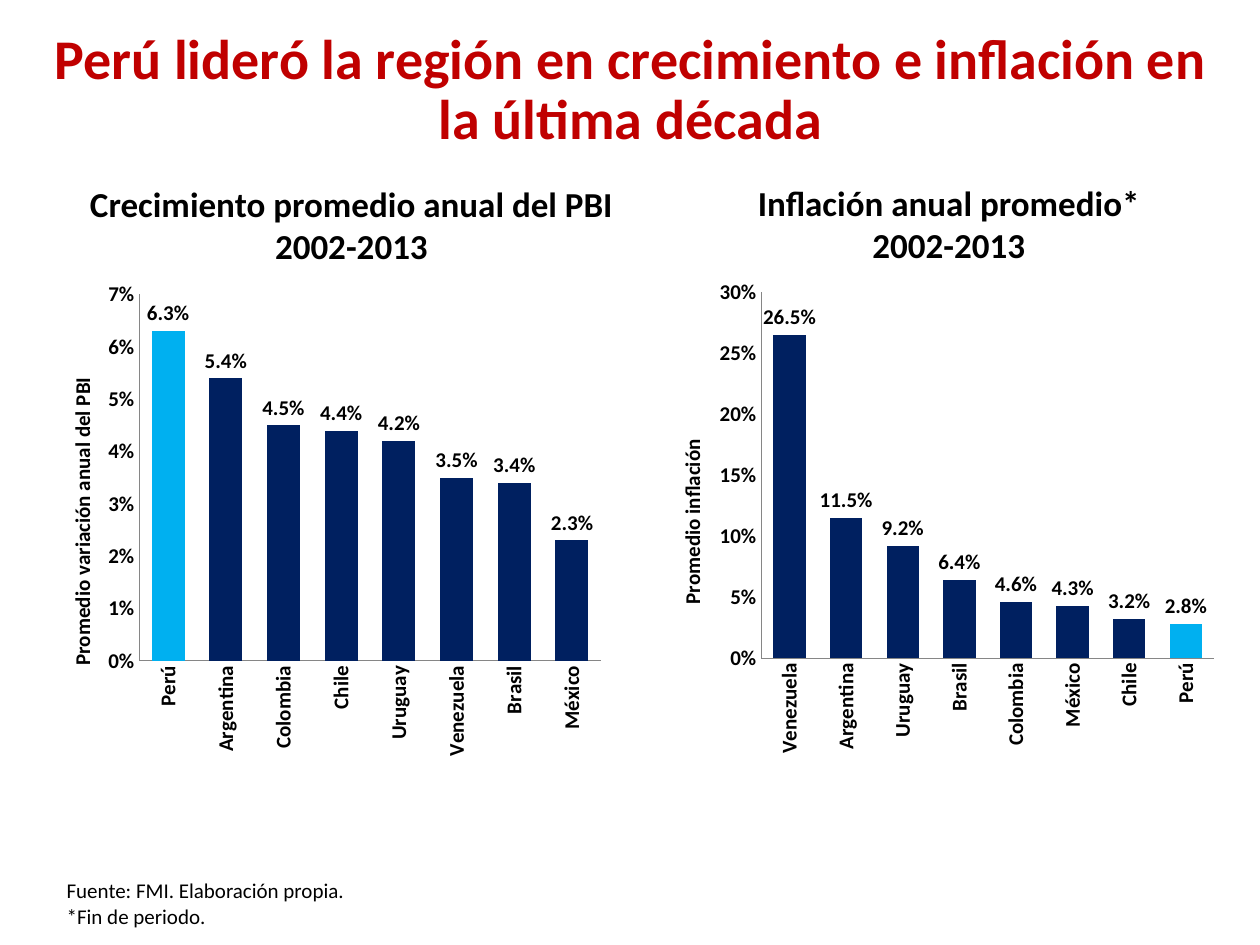
import dataclasses

import lxml.etree
import pptx
import pptx.chart.axis
import pptx.chart.chart
import pptx.chart.data
import pptx.dml.color
import pptx.enum.chart
import pptx.enum.shapes
import pptx.enum.text
import pptx.oxml.ns
import pptx.slide
import pptx.text.text
import pptx.util

Pt = pptx.util.Pt
Color = pptx.dml.color.RGBColor
Align = pptx.enum.text.PP_ALIGN


@dataclasses.dataclass(frozen=True)
class Theme:
    font: str = "Calibri"
    title_size: int = 32
    heading_size: int = 20
    small_size: int = 12
    title: Color = Color(0xC0, 0x00, 0x00)
    text: Color = Color(0x00, 0x00, 0x00)
    background: Color = Color(0xFF, 0xFF, 0xFF)
    bar: Color = Color(0x00, 0x20, 0x60)
    highlight: Color = Color(0x00, 0xB0, 0xF0)
    axis: Color = Color(0x86, 0x86, 0x86)


@dataclasses.dataclass(frozen=True)
class Box:
    left: float
    top: float
    width: float
    height: float

    def lengths(self) -> tuple:
        return Pt(self.left), Pt(self.top), Pt(self.width), Pt(self.height)


@dataclasses.dataclass(frozen=True)
class Panel:
    heading: str
    heading_box: Box
    chart_box: Box
    plot_area: dict[str, float]
    axis_title: str
    axis_title_place: dict[str, float]
    maximum: float
    step: float
    values: dict[str, float]


THEME = Theme()
HOME_COUNTRY = "Perú"
PANELS = (
    Panel(
        "Crecimiento promedio anual del PBI\n2002-2013",
        Box(42.5, 100.8, 316.8, 55.4), Box(20.2, 157, 329.8, 283),
        {"x": 0.18, "y": 0.04, "w": 0.8, "h": 0.74},
        "Promedio variación anual del PBI", {"x": 0.05, "y": 0.2}, 0.07, 0.01,
        {"Perú": 0.063, "Argentina": 0.054, "Colombia": 0.045, "Chile": 0.044,
         "Uruguay": 0.042, "Venezuela": 0.035, "Brasil": 0.034, "México": 0.023},
    ),
    Panel(
        "Inflación anual promedio*\n2002-2013",
        Box(383.8, 100.1, 316.8, 55.4), Box(368.6, 155.5, 331.9, 283),
        {"x": 0.2, "y": 0.04, "w": 0.78, "h": 0.74},
        "Promedio inflación", {"x": 0.05, "y": 0.33}, 0.3, 0.05,
        {"Venezuela": 0.265, "Argentina": 0.115, "Uruguay": 0.092, "Brasil": 0.064,
         "Colombia": 0.046, "México": 0.043, "Chile": 0.032, "Perú": 0.028},
    ),
)


def style_font(font: pptx.text.text.Font, size: int, color: Color, bold: bool) -> None:
    font.name = THEME.font
    font.size = Pt(size)
    font.bold = bold
    font.color.rgb = color


def write_text(frame: pptx.text.text.TextFrame, text: str, size: int, color: Color,
               bold: bool, alignment: Align) -> None:
    frame.text = text
    for paragraph in frame.paragraphs:
        paragraph.alignment = alignment
        for run in paragraph.runs:
            style_font(run.font, size, color, bold)


def add_label(slide: pptx.slide.Slide, box: Box, text: str, size: int, bold: bool,
              alignment: Align, wrap: bool) -> None:
    frame = slide.shapes.add_textbox(*box.lengths()).text_frame
    frame.word_wrap = wrap
    frame.auto_size = pptx.enum.text.MSO_AUTO_SIZE.SHAPE_TO_FIT_TEXT
    write_text(frame, text, size, THEME.text, bold, alignment)


def add_title(slide: pptx.slide.Slide) -> None:
    shape = slide.shapes.add_shape(
        pptx.enum.shapes.MSO_SHAPE.RECTANGLE, *Box(20.2, 15.1, 680.4, 74.2).lengths())
    shape.shadow.inherit = False
    shape.fill.solid()
    shape.fill.fore_color.rgb = THEME.background
    shape.line.fill.background()
    frame = shape.text_frame
    frame.word_wrap = True
    frame.vertical_anchor = pptx.enum.text.MSO_ANCHOR.MIDDLE
    write_text(frame, "Perú lideró la región en crecimiento e inflación en la última década",
               THEME.title_size, THEME.title, True, Align.CENTER)
    frame.paragraphs[0].line_spacing = 0.9


def set_layout(element: lxml.etree._Element, index: int, place: dict[str, float]) -> None:
    qualified = pptx.oxml.ns.qn
    for existing in element.findall(qualified("c:layout")):
        element.remove(existing)
    layout = lxml.etree.Element(qualified("c:layout"))
    manual = lxml.etree.SubElement(layout, qualified("c:manualLayout"))
    settings = {"xMode": "edge", "yMode": "edge", **place}
    if "w" in place:
        settings = {"layoutTarget": "inner", **settings}
    for name, value in settings.items():
        lxml.etree.SubElement(manual, qualified(f"c:{name}")).set("val", str(value))
    element.insert(index, layout)


def rotate_text(element: lxml.etree._Element) -> None:
    body = element.find(".//" + pptx.oxml.ns.qn("a:bodyPr"))
    body.set("rot", "-5400000")
    body.set("vert", "horz")


def style_axis(axis: pptx.chart.axis._BaseAxis) -> None:
    axis.has_major_gridlines = False
    axis.major_tick_mark = pptx.enum.chart.XL_TICK_MARK.NONE
    axis.minor_tick_mark = pptx.enum.chart.XL_TICK_MARK.NONE
    axis.format.line.color.rgb = THEME.axis
    axis.format.line.width = Pt(0.75)
    style_font(axis.tick_labels.font, THEME.small_size, THEME.text, True)


def style_value_axis(axis: pptx.chart.axis.ValueAxis, panel: Panel) -> None:
    style_axis(axis)
    axis.minimum_scale = 0
    axis.maximum_scale = panel.maximum
    axis.major_unit = panel.step
    axis.tick_labels.number_format = "0%"
    axis.tick_labels.number_format_is_linked = False
    title = axis.axis_title
    write_text(title.text_frame, panel.axis_title, THEME.small_size, THEME.text, True, Align.CENTER)
    rotate_text(title._element)
    set_layout(title._element, 1, panel.axis_title_place)


def style_bars(chart: pptx.chart.chart.Chart, panel: Panel) -> None:
    plot = chart.plots[0]
    plot.gap_width = 75
    plot.vary_by_categories = False
    series = plot.series[0]
    series.format.fill.solid()
    series.format.fill.fore_color.rgb = THEME.bar
    point_fill = series.points[list(panel.values).index(HOME_COUNTRY)].format.fill
    point_fill.solid()
    point_fill.fore_color.rgb = THEME.highlight
    labels = series.data_labels
    labels.show_value = True
    labels.number_format = "0.0%"
    labels.number_format_is_linked = False
    labels.position = pptx.enum.chart.XL_LABEL_POSITION.OUTSIDE_END
    style_font(labels.font, THEME.small_size, THEME.text, True)


def add_panel(slide: pptx.slide.Slide, panel: Panel) -> None:
    add_label(slide, panel.heading_box, panel.heading, THEME.heading_size, True, Align.CENTER, True)
    data = pptx.chart.data.CategoryChartData()
    data.categories = list(panel.values)
    data.add_series("Series 1", list(panel.values.values()))
    chart = slide.shapes.add_chart(
        pptx.enum.chart.XL_CHART_TYPE.COLUMN_CLUSTERED, *panel.chart_box.lengths(), data).chart
    chart.has_title = False
    chart.has_legend = False
    style_font(chart.font, THEME.small_size, THEME.text, True)
    style_axis(chart.category_axis)
    rotate_text(chart.category_axis._element)
    style_value_axis(chart.value_axis, panel)
    style_bars(chart, panel)
    set_layout(chart._chartSpace.chart.plotArea, 0, panel.plot_area)


def main() -> None:
    presentation = pptx.Presentation()
    presentation.slide_width = Pt(720)
    presentation.slide_height = Pt(540)
    slide = presentation.slides.add_slide(presentation.slide_layouts[6])
    for panel in PANELS:
        add_panel(slide, panel)
    add_title(slide)
    add_label(slide, Box(31, 498.2, 175.7, 36), "Fuente: FMI. Elaboración propia.\n*Fin de periodo.",
              THEME.small_size, False, Align.LEFT, False)
    presentation.save("out.pptx")


if __name__ == "__main__":
    main()
